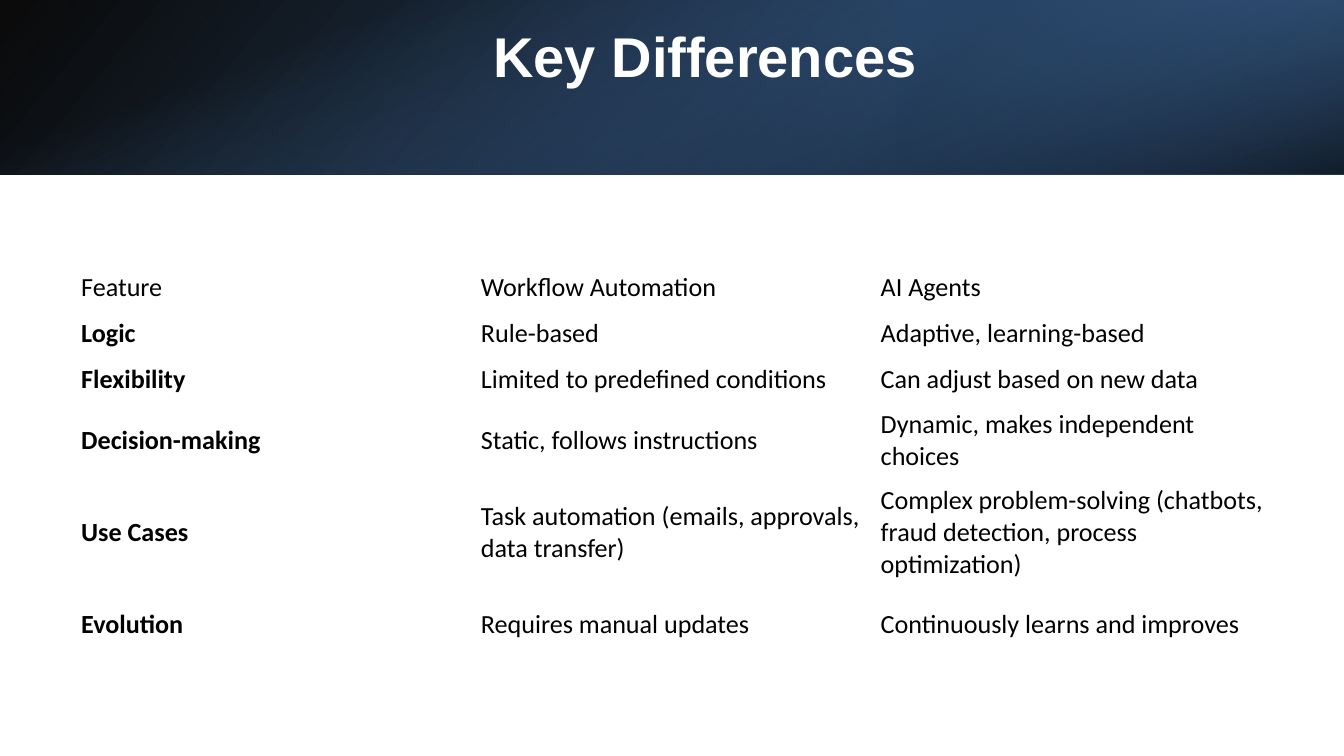
from lxml.etree import SubElement as Sub
from pptx import Presentation
from pptx.dml.color import RGBColor
from pptx.enum.shapes import MSO_SHAPE
from pptx.enum.text import MSO_ANCHOR, PP_ALIGN
from pptx.oxml.ns import qn
from pptx.util import Cm, Pt

WIDTH, HEIGHT, BAND = 50.8, 28.58, 6.58
TITLE = "Key Differences"
ROWS = [
    ("Feature", "Workflow Automation", "AI Agents"),
    ("Logic", "Rule-based", "Adaptive, learning-based"),
    ("Flexibility", "Limited to predefined conditions", "Can adjust based on new data"),
    ("Decision-making", "Static, follows instructions", "Dynamic, makes independent choices"),
    ("Use Cases", "Task automation (emails, approvals, data transfer)",
     "Complex problem-solving (chatbots, fraud detection, process optimization)"),
    ("Evolution", "Requires manual updates", "Continuously learns and improves"),
]
COL_WIDTHS = [15.11, 15.11, 15.32]
ROW_HEIGHTS = [1.73, 1.73, 1.73, 2.9, 4.06, 2.9]
BANDS = [
    dict(box=(0, 0, WIDTH, BAND), rot=0, flip=True, angle=140,
         stops=[(0, "000000", 96), (100, "376092", 100)]),
    dict(box=(WIDTH * 2 / 3, 0, WIDTH / 3, BAND), rot=180, flip=True, angle=320,
         stops=[(19, "254061", 68), (100, "4F81BD", 79)]),
    dict(box=((WIDTH - BAND) / 2, (BAND - WIDTH) / 2, BAND, WIDTH), rot=90, flip=False, angle=340,
         stops=[(23, "4F81BD", 0), (99, "000000", 74)]),
]
TITLE_FONT = dict(name="Arial", size=Pt(60), bold=True)
CELL_FONT = dict(name="Calibri", size=Pt(28))
CELL_FORMAT = dict(vertical_anchor=MSO_ANCHOR.MIDDLE, margin_left=Cm(0.38), margin_right=Cm(0.38),
                   margin_top=Cm(0.2), margin_bottom=Cm(0.2))
TITLE_FORMAT = dict(word_wrap=True, vertical_anchor=MSO_ANCHOR.MIDDLE, margin_top=0,
                    margin_bottom=Cm(2.39))


def rgb(value):
    return RGBColor.from_string(value)


def apply(obj, values):
    for key, value in values.items():
        setattr(obj, key, value)


def write(p, text, font, color):
    r = p.add_run()
    r.text = text
    apply(r.font, font)
    r.font.color.rgb = rgb(color)


def add_band(s, box, rot, flip, angle, stops):
    sp = s.shapes.add_shape(MSO_SHAPE.RECTANGLE, *map(Cm, box))
    sp.rotation = rot
    sp.shadow.inherit = False
    sp.line.fill.background()
    sp.fill.gradient()
    props = sp._element.spPr
    if flip:
        props.find(qn("a:xfrm")).set("flipH", "1")
    grad = props.find(qn("a:gradFill"))
    for child in list(grad):
        grad.remove(child)
    stop_list = Sub(grad, qn("a:gsLst"))
    for pos, color, alpha in stops:
        stop = Sub(stop_list, qn("a:gs"), pos=str(pos * 1000))
        tint = Sub(stop, qn("a:srgbClr"), val=color)
        Sub(tint, qn("a:alpha"), val=str(alpha * 1000))
    Sub(grad, qn("a:lin"), ang=str(angle * 60000), scaled="0")


def add_title(s):
    tf = s.shapes.add_textbox(Cm(5.72), Cm(1.45), Cm(41.86), Cm(3.66)).text_frame
    apply(tf, TITLE_FORMAT)
    p = tf.paragraphs[0]
    p.alignment = PP_ALIGN.CENTER
    write(p, TITLE, TITLE_FONT, "FFFFFF")


def add_comparison(s):
    table = s.shapes.add_table(len(ROWS), len(COL_WIDTHS), Cm(2.69), Cm(10.01),
                               Cm(sum(COL_WIDTHS)), Cm(sum(ROW_HEIGHTS))).table
    apply(table, dict(first_row=False, horz_banding=False))
    for col, width in zip(table.columns, COL_WIDTHS):
        col.width = Cm(width)
    for i, (row, height) in enumerate(zip(table.rows, ROW_HEIGHTS)):
        row.height = Cm(height)
        for j, text in enumerate(ROWS[i]):
            cell = row.cells[j]
            cell.fill.background()
            apply(cell, CELL_FORMAT)
            bold = i > 0 and j == 0
            write(cell.text_frame.paragraphs[0], text, dict(CELL_FONT, bold=bold), "000000")


def main():
    prs = Presentation()
    apply(prs, dict(slide_width=Cm(WIDTH), slide_height=Cm(HEIGHT)))
    s = prs.slides.add_slide(prs.slide_layouts[6])
    for band in BANDS:
        add_band(s, **band)
    add_title(s)
    add_comparison(s)
    prs.save("out.pptx")


if __name__ == "__main__":
    main()
